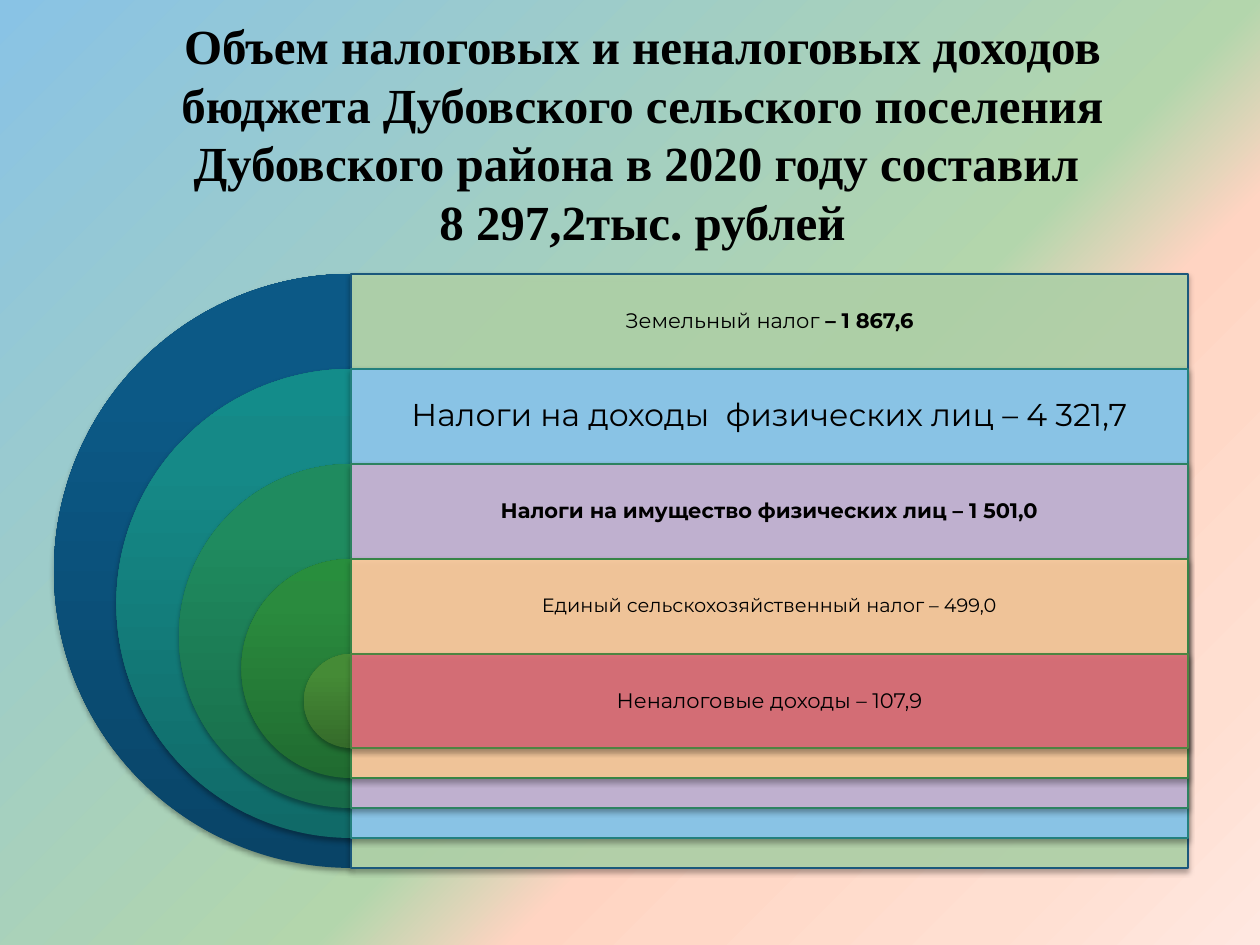
from lxml import etree
from pptx import Presentation
from pptx.dml.color import RGBColor
from pptx.enum.shapes import MSO_SHAPE
from pptx.enum.text import MSO_ANCHOR, PP_ALIGN
from pptx.oxml.ns import qn
from pptx.util import Emu, Pt

PIE, RECT = MSO_SHAPE.PIE, MSO_SHAPE.RECTANGLE
CENTER, MIDDLE = PP_ALIGN.CENTER, MSO_ANCHOR.MIDDLE
SCALE = 914400 / 126
SANS, SERIF = "Montserrat", "Times New Roman"

TITLE = [
    ("Объем налоговых и неналоговых доходов бюджета Дубовского сельского "
     "поселения Дубовского района в 2020 году составил \v"
     "8 297,2тыс. рублей", True),
]
BACK = [(0, "89C3E5"), (57, "B3D6AC"), (66, "FFD4C2"),
        (73, "FFD8C7"), (87, "FFDFD1"), (100, "FFE7E0")]

# runs (text, bold), size, inset, pie colours, bar colour, opacity, bar line
ROWS = [
    ([("Земельный налог ", False), ("– 1 867,6", True)], 12, 6,
     ("094467", "0C5986", "0A5A89"), "B3D6AC", 90, "1B587C"),
    ([("Налоги на доходы  физических лиц – 4 321,7", False)], 18, 9,
     ("106A68", "158987", "138C8A"), "89C3E5", 100, "23807E"),
    ([("Налоги на имущество физических лиц – 1 501,0", True)], 12, 6,
     ("186B49", "1F8B5F", "1D8D60"), "BFB0CF", 100, "2D8260"),
    ([("Единый сельскохозяйственный налог – 499,0", False)], 11, 6,
     ("206B30", "2A8B3E", "288E3D"), "FBCC9A", 90, "378447"),
    ([("Неналоговые доходы – 107,9", False)], 12, 6,
     ("356B2A", "458B36", "458D35"), "D96B77", 90, "4E8542"),
]
TOP, ROW = 274, 95
MID, WIDE = 351, 837
SIZE, SHRINK = 594, 125


def px(n):
    return Emu(round(n * SCALE))


def rgb(code):
    return RGBColor.from_string(code)


def sub(node, tag, **attrs):
    """Append a child element with the given attributes."""
    child = etree.SubElement(node, qn(tag))
    for key, val in attrs.items():
        child.set(key, str(val))
    return child


def blend(fill, root, stops, angle):
    """Give fill, found under root, a linear gradient of (percent, colour)."""
    fill.gradient()
    fill.gradient_angle = angle
    items = next(root.iter(qn("a:gsLst")))
    for old in list(items):
        items.remove(old)
    for pos, code in stops:
        stop = sub(items, "a:gs", pos=pos * 1000)
        sub(stop, "a:srgbClr", val=code)


def add_shape(slide, kind, box):
    """Add a preset shape with a soft shadow below it."""
    shape = slide.shapes.add_shape(kind, *map(px, box))
    shape.shadow.inherit = False
    effects = next(shape._element.iter(qn("a:effectLst")))
    shade = sub(effects, "a:outerShdw", blurRad=40000, dist=23000,
                dir=5400000, rotWithShape=0)
    color = sub(shade, "a:srgbClr", val="000000")
    sub(color, "a:alpha", val=35000)
    return shape


def add_pie(slide, box, colors):
    """Add the left half of a disc."""
    pie = add_shape(slide, PIE, box)
    pie.adjustments[0], pie.adjustments[1] = 54, 162
    blend(pie.fill, pie._element, zip((0, 80, 100), colors), 90)
    pie.line.fill.background()


def add_bar(slide, box, color, alpha, edge):
    bar = add_shape(slide, RECT, box)
    bar.fill.solid()
    bar.fill.fore_color.rgb = rgb(color)
    if alpha < 100:
        tint = next(bar._element.spPr.iter(qn("a:srgbClr")))
        sub(tint, "a:alpha", val=alpha * 1000)
    bar.line.color.rgb = rgb(edge)
    bar.line.width = Pt(0.75)


def add_text(slide, box, runs, size, font=SANS, inset=6, space=0.9):
    frame = slide.shapes.add_textbox(*map(px, box)).text_frame
    frame.word_wrap = True
    frame.vertical_anchor = MIDDLE
    frame.margin_left = frame.margin_right = px(inset)
    frame.margin_top = frame.margin_bottom = px(inset)
    para = frame.paragraphs[0]
    para.alignment = CENTER
    para.line_spacing = space
    for text, bold in runs:
        for i, part in enumerate(text.split("\v")):
            if i:
                para.add_line_break()
            run = para.add_run()
            run.text = part
            run.font.name = font
            run.font.size = Pt(size)
            run.font.bold = bold
            run.font.color.rgb = rgb("000000")


def main():
    deck = Presentation()
    deck.slide_width, deck.slide_height = px(1260), px(945)
    slide = deck.slides.add_slide(deck.slide_layouts[6])
    blend(slide.background.fill, slide._element, BACK, 315)
    add_text(slide, (88, 0, 1109, 266), TITLE, 28, font=SERIF, space=Pt(33.5))
    for i, (runs, size, inset, colors, color, alpha, edge) in enumerate(ROWS):
        top, tall = TOP + i * ROW, SIZE - i * SHRINK
        add_pie(slide, (MID - tall / 2, top, tall, tall), colors)
        add_bar(slide, (MID, top, WIDE, tall), color, alpha, edge)
        add_text(slide, (MID, top, WIDE, ROW), runs, size, inset=inset)
    deck.save("out.pptx")


if __name__ == "__main__":
    main()
